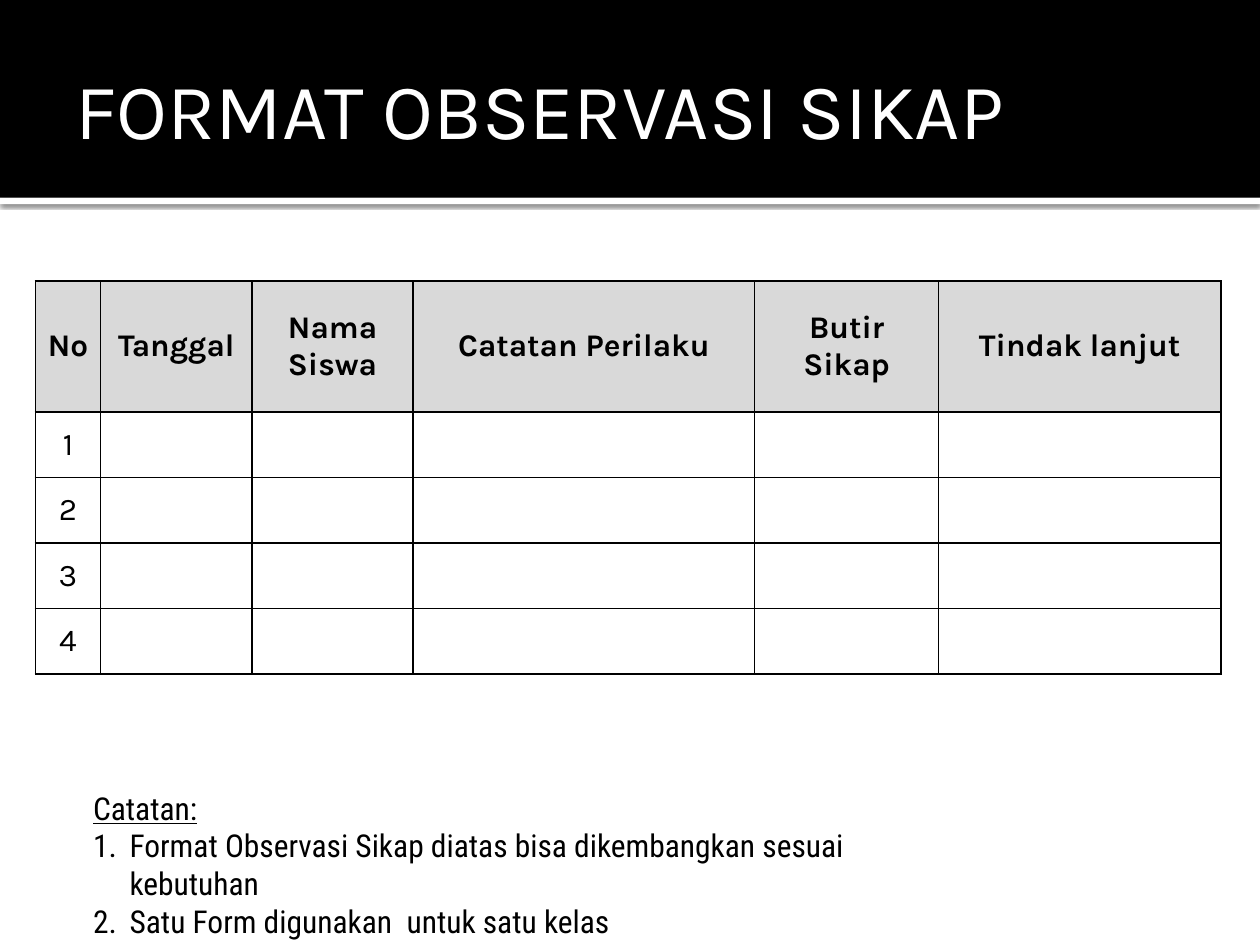
import lxml.etree
import pptx
import pptx.dml.color
import pptx.enum.shapes
import pptx.enum.text
import pptx.oxml
import pptx.oxml.ns
import pptx.util


def color(hex_string):
    return pptx.dml.color.RGBColor.from_string(hex_string)


def add_run(paragraph, text, font_name, size, hex_string="000000"):
    run = paragraph.add_run()
    run.text = text
    run.font.name = font_name
    run.font.size = pptx.util.Pt(size)
    run.font.color.rgb = color(hex_string)
    return run


presentation = pptx.Presentation()
presentation.slide_width = pptx.util.Inches(10)
presentation.slide_height = pptx.util.Inches(7.5)
slide = presentation.slides.add_slide(presentation.slide_layouts[6])
namespace = pptx.oxml.ns.nsdecls("a")
middle = pptx.enum.text.MSO_ANCHOR.MIDDLE

# Grid of 100 columns and 75 rows
column = presentation.slide_width // 100
row = presentation.slide_height // 75

# Header band and the white strip below it
band_height = 15.7
for top, height, fill in ((band_height, 0.5, "FFFFFF"), (0, band_height, "000000")):
    shape = slide.shapes.add_shape(
        pptx.enum.shapes.MSO_SHAPE.RECTANGLE,
        0, int(top * row), 100 * column, int(height * row))
    shape.fill.solid()
    shape.fill.fore_color.rgb = color(fill)
    shape.line.fill.background()
    shape.shadow.inherit = False
    if top:
        effects = shape.element.spPr.find(pptx.oxml.ns.qn("a:effectLst"))
        effects.append(pptx.oxml.parse_xml(
            f'<a:outerShdw {namespace} blurRad="{pptx.util.Pt(2.5)}" '
            f'dist="{pptx.util.Pt(0.8)}" dir="5400000" algn="t" rotWithShape="0">'
            '<a:srgbClr val="000000"><a:alpha val="60000"/></a:srgbClr></a:outerShdw>'))

# Title
title = slide.shapes.add_textbox(
    5 * column, int(1.7 * row), 90 * column, int(13.7 * row))
title.text_frame.word_wrap = True
title.text_frame.vertical_anchor = middle
title.text_frame.margin_right = column // 2
add_run(title.text_frame.paragraphs[0], "FORMAT OBSERVASI SIKAP", "Karla", 45, "FFFFFF")

# Observation table
headings = ["No", "Tanggal", "Nama Siswa", "Catatan Perilaku", "Butir Sikap", "Tindak lanjut"]
column_shares = [5.2, 12, 12.8, 27.1, 14.6, 22.4]
row_shares = [10.4] + [5.2] * 4
table = slide.shapes.add_table(
    len(row_shares), len(headings), int(2.8 * column), int(22.3 * row),
    int(sum(column_shares) * column), int(sum(row_shares) * row)).table
table.horz_banding = False
for table_column, share in zip(table.columns, column_shares):
    table_column.width = int(share * column)
for table_row, share in zip(table.rows, row_shares):
    table_row.height = int(share * row)

for row_index in range(len(row_shares)):
    for column_index, heading in enumerate(headings):
        cell = table.cell(row_index, column_index)
        cell.vertical_anchor = middle
        cell.margin_left = cell.margin_right = int(0.7 * column)
        cell.margin_top = cell.margin_bottom = 0
        is_heading = row_index == 0
        if is_heading:
            cell.fill.solid()
            cell.fill.fore_color.rgb = color("D9D9D9")
        else:
            cell.fill.background()
        if is_heading or column_index == 0:
            paragraph = cell.text_frame.paragraphs[0]
            paragraph.alignment = pptx.enum.text.PP_ALIGN.CENTER
            text = heading if is_heading else str(row_index)
            add_run(paragraph, text, "Karla", 18).font.bold = is_heading
        # Borders stand before the fill in the cell properties
        properties = cell._tc.get_or_add_tcPr()
        for position, side in enumerate(("lnL", "lnR", "lnT", "lnB")):
            properties.insert(position, pptx.oxml.parse_xml(
                f'<a:{side} {namespace} w="{pptx.util.Pt(1)}"><a:solidFill>'
                f'<a:srgbClr val="000000"/></a:solidFill></a:{side}>'))

# Notes under the table
notes = slide.shapes.add_textbox(
    int(6.4 * column), int(62.1 * row), int(64.7 * column), int(10.1 * row))
notes.text_frame.word_wrap = True
note_lines = [
    "Catatan:",
    "Format Observasi Sikap diatas bisa dikembangkan sesuai kebutuhan",
    "Satu Form digunakan  untuk satu kelas",
]
indent = int(2.9 * column)
for index, line in enumerate(note_lines):
    paragraph = notes.text_frame.paragraphs[0] if index == 0 else notes.text_frame.add_paragraph()
    run = add_run(paragraph, line, "Roboto Condensed", 18)
    run.font.underline = index == 0
    properties = paragraph._p.get_or_add_pPr()
    properties.set("marL", str(indent))
    properties.set("indent", str(-indent))
    if index:
        numbering = lxml.etree.SubElement(properties, pptx.oxml.ns.qn("a:buAutoNum"))
        numbering.set("type", "arabicPeriod")

presentation.save("out.pptx")
